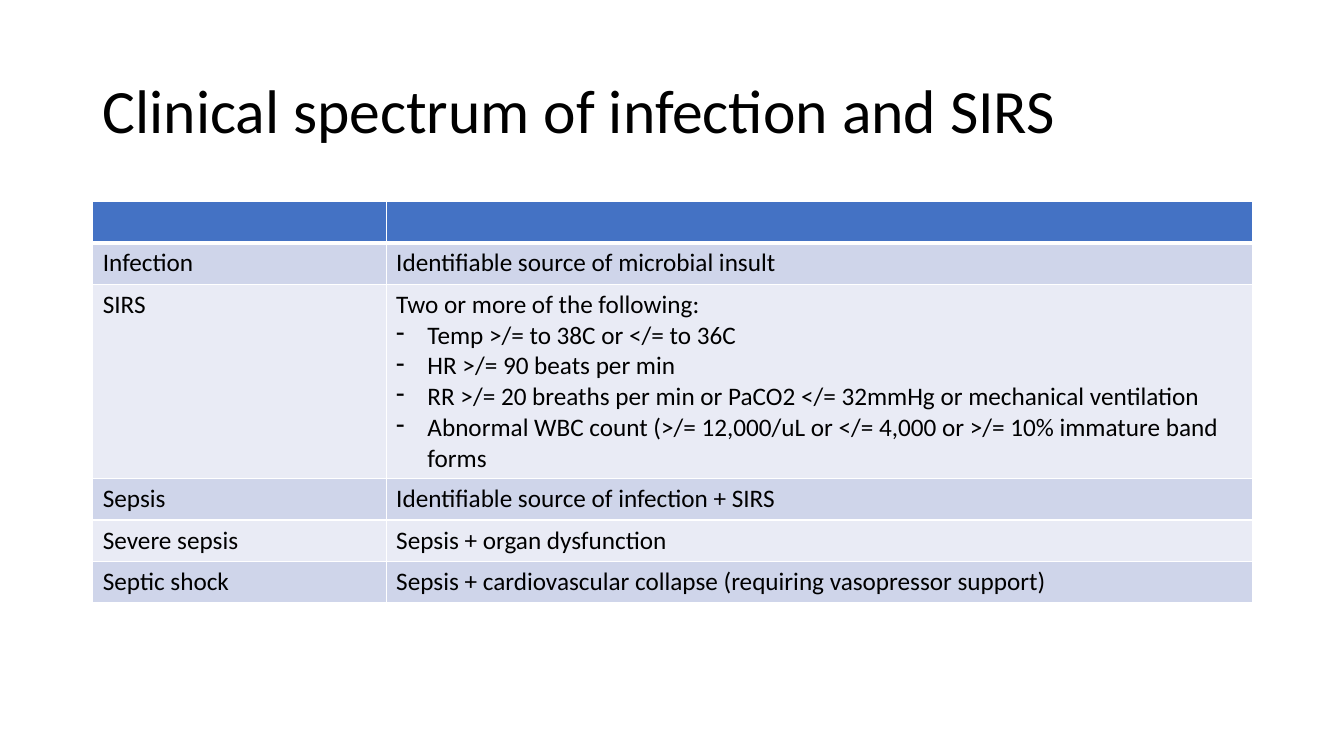
"""Build a slide with a table of the clinical spectrum of infection and SIRS."""
from dataclasses import dataclass

from lxml import etree
from pptx import Presentation
from pptx import util as u
from pptx.dml import color, fill
from pptx.enum import text
from pptx.oxml import ns
from pptx.table import _Cell
from pptx.text import text as t

BLACK, WHITE, HEADER = "000000", "FFFFFF", "4472C4"
BANDS = ("CFD5EA", "E9EBF5")
LEFT, WIDTH = 0.92, 11.5
COLUMN_WIDTHS = (2.91, 8.59)
ROW_HEIGHT, SIRS_HEIGHT = 0.41, 1.93
BULLET_INDENT = 0.31


@dataclass(frozen=True)
class Condition:
    name: str
    definition: str
    criteria: tuple[str, ...] = ()
    height: float = ROW_HEIGHT


CONDITIONS = (
    Condition("Infection", "Identifiable source of microbial insult"),
    Condition(
        "SIRS",
        "Two or more of the following:",
        (
            "Temp >/= to 38C or </= to 36C",
            "HR >/= 90 beats per min",
            "RR >/= 20 breaths per min or PaCO2 </= 32mmHg or mechanical ventilation",
            "Abnormal WBC count (>/= 12,000/uL or </= 4,000 or >/= 10% immature band forms",
        ),
        SIRS_HEIGHT,
    ),
    Condition("Sepsis", "Identifiable source of infection + SIRS"),
    Condition("Severe sepsis", "Sepsis + organ dysfunction"),
    Condition("Septic shock", "Sepsis + cardiovascular collapse (requiring vasopressor support)"),
)


def paint(target: fill.FillFormat, hex_color: str) -> None:
    target.solid()
    target.fore_color.rgb = color.RGBColor.from_string(hex_color)


def write(paragraph: t._Paragraph, content: str, *, size: float = 18,
          hex_color: str = BLACK, bullet: str = "", spacing: float | None = None) -> None:
    run = paragraph.add_run()
    run.text = content
    run.font.name = "Calibri"
    run.font.size = u.Pt(size)
    paint(run.font.fill, hex_color)
    if spacing:
        paragraph.line_spacing = spacing
    if bullet:
        properties = paragraph._p.get_or_add_pPr()
        indent = u.Inches(BULLET_INDENT)
        properties.set("marL", str(indent))
        properties.set("indent", str(-indent))
        etree.SubElement(properties, ns.qn("a:buChar"), char=bullet)


def style_cell(cell: _Cell, hex_color: str, top: float = 1, bottom: float = 1) -> None:
    properties = cell._tc.get_or_add_tcPr()
    for side, points in (("L", 1), ("R", 1), ("T", top), ("B", bottom)):
        line = etree.SubElement(properties, ns.qn(f"a:ln{side}"), w=str(u.Pt(points)))
        solid = etree.SubElement(line, ns.qn("a:solidFill"))
        etree.SubElement(solid, ns.qn("a:srgbClr"), val=WHITE)
    paint(cell.fill, hex_color)


def add_title(slide, content: str) -> None:
    box = slide.shapes.add_textbox(
        u.Inches(LEFT), u.Inches(0.4), u.Inches(WIDTH), u.Inches(1.45))
    frame = box.text_frame
    frame.word_wrap = True
    frame.vertical_anchor = text.MSO_ANCHOR.MIDDLE
    write(frame.paragraphs[0], content, size=44, spacing=0.9)


def add_conditions(slide) -> None:
    heights = [ROW_HEIGHT, *(condition.height for condition in CONDITIONS)]
    table = slide.shapes.add_table(
        len(heights), len(COLUMN_WIDTHS), u.Inches(LEFT), u.Inches(2),
        u.Inches(WIDTH), u.Inches(sum(heights))).table
    for column, width in zip(table.columns, COLUMN_WIDTHS):
        column.width = u.Inches(width)
    for row, height in zip(table.rows, heights):
        row.height = u.Inches(height)
    for cell in table.rows[0].cells:
        style_cell(cell, HEADER, bottom=3)
    for index, condition in enumerate(CONDITIONS):
        cells = table.rows[index + 1].cells
        for cell, content in zip(cells, (condition.name, condition.definition)):
            style_cell(cell, BANDS[index % 2], top=1 if index else 3)
            write(cell.text_frame.paragraphs[0], content)
        for criterion in condition.criteria:
            write(cell.text_frame.add_paragraph(), criterion, bullet="-")


def main() -> None:
    presentation = Presentation()
    presentation.slide_width = u.Inches(13.33)
    presentation.slide_height = u.Inches(7.5)
    slide = presentation.slides.add_slide(presentation.slide_layouts[6])
    add_title(slide, "Clinical spectrum of infection and SIRS")
    add_conditions(slide)
    presentation.save("out.pptx")


if __name__ == "__main__":
    main()
